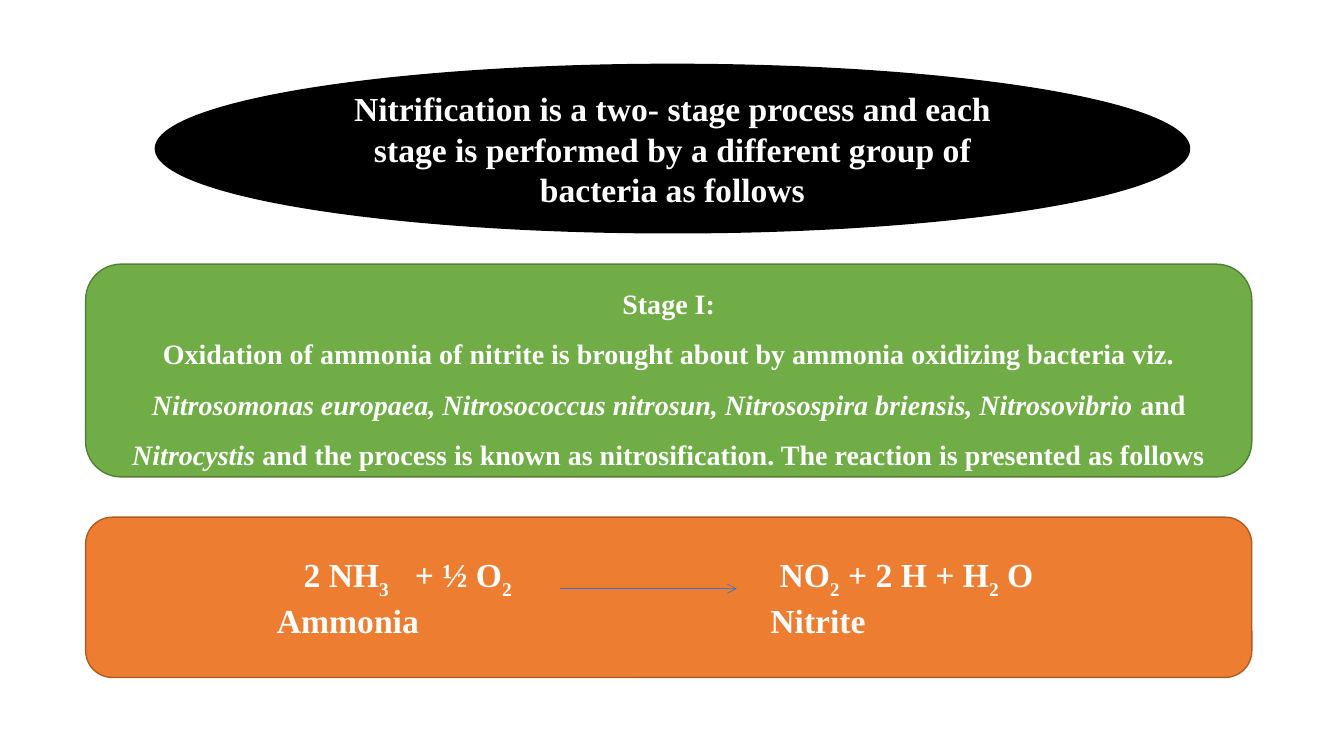
from lxml import etree
from pptx import Presentation
from pptx.dml.color import RGBColor
from pptx.enum import shapes, text
from pptx.oxml.ns import qn
from pptx.util import Pt

COLOURS = {
    "white": "FFFFFF",
    "black": "000000",
    "green": "70AD47",
    "green_edge": "538035",
    "orange": "ED7D31",
    "orange_edge": "AF5C24",
    "blue": "4472C4",
}
FONT = "Times New Roman"
PANEL_LEFT, PANEL_WIDTH = 61.2, 833

HEADING = [[("Nitrification is a two- stage process and each stage is performed "
             "by a different group of bacteria as follows", "")]]
STAGE = [
    [("Stage I:", "")],
    [("Oxidation of ammonia of nitrite is brought about by ammonia oxidizing bacteria viz. ", ""),
     ("Nitrosomonas europaea, Nitrosococcus nitrosun, Nitrosospira briensis, Nitrosovibrio ", "italic"),
     ("and ", ""),
     ("Nitrocystis ", "italic"),
     ("and the process is known as nitrosification. The reaction is presented as follows", "")],
]
REACTION = [
    [("\t2 NH", ""), ("3", "sub"), ("\t+ ½ O", ""), ("2", "sub"),
     ("\tNO", ""), ("2", "sub"), (" + 2 H + H", ""), ("2", "sub"), (" O", "")],
    [("\tAmmonia\tNitrite", "")],
]
REACTION_TABS = [(143, 222.5, 483), (124, 476.5)]


def colour(name):
    return RGBColor.from_string(COLOURS[name])


def add_panel(page, preset, place, fill, edge):
    box = page.shapes.add_shape(preset, *map(Pt, place))
    box.shadow.inherit = False
    box.fill.solid()
    box.fill.fore_color.rgb = colour(fill)
    box.line.color.rgb = colour(edge)
    box.line.width = Pt(1)
    return box


def write_text(box, paragraphs, size, align=text.PP_ALIGN.CENTER, spacing=None):
    """Fill a box with paragraphs, each a list of (words, style) pairs."""
    frame = box.text_frame
    frame.word_wrap = True
    frame.vertical_anchor = text.MSO_ANCHOR.MIDDLE
    for index, pieces in enumerate(paragraphs):
        para = frame.add_paragraph() if index else frame.paragraphs[0]
        para.alignment = align
        if spacing:
            para.line_spacing = spacing
        for words, style in pieces:
            span = para.add_run()
            span.text = words
            span.font.name = FONT
            span.font.size = Pt(size)
            span.font.bold = True
            span.font.italic = style == "italic"
            span.font.color.rgb = colour("white")
            if style == "sub":
                span._r.get_or_add_rPr().set("baseline", "-25000")


def set_tabs(para, stops):
    tabs = etree.SubElement(para._p.get_or_add_pPr(), qn("a:tabLst"))
    for stop in stops:
        etree.SubElement(tabs, qn("a:tab"), pos=str(Pt(stop)), algn="l")


def add_arrow(page, start, end):
    arrow = page.shapes.add_connector(shapes.MSO_CONNECTOR.STRAIGHT, *map(Pt, start + end))
    arrow.line.color.rgb = colour("blue")
    arrow.line.width = Pt(0.5)
    etree.SubElement(arrow.line._get_or_add_ln(), qn("a:tailEnd"), type="arrow")
    etree.SubElement(arrow._element.spPr, qn("a:effectLst"))


def main():
    deck = Presentation()
    deck.slide_width, deck.slide_height = Pt(960), Pt(540)
    page = deck.slides.add_slide(deck.slide_layouts[6])
    preset = shapes.MSO_SHAPE

    heading = add_panel(page, preset.OVAL, (111, 46, 738.7, 120.3), "black", "black")
    write_text(heading, HEADING, 24)

    stage = add_panel(page, preset.ROUNDED_RECTANGLE,
                      (PANEL_LEFT, 188.7, PANEL_WIDTH, 152), "green", "green_edge")
    write_text(stage, STAGE, 20, spacing=1.5)

    reaction = add_panel(page, preset.ROUNDED_RECTANGLE,
                         (PANEL_LEFT, 369.4, PANEL_WIDTH, 114.5), "orange", "orange_edge")
    write_text(reaction, REACTION, 24, align=text.PP_ALIGN.LEFT)
    for para, stops in zip(reaction.text_frame.paragraphs, REACTION_TABS):
        set_tabs(para, stops)

    add_arrow(page, (400.3, 420.5), (526.3, 420.5))
    deck.save("out.pptx")


if __name__ == "__main__":
    main()
